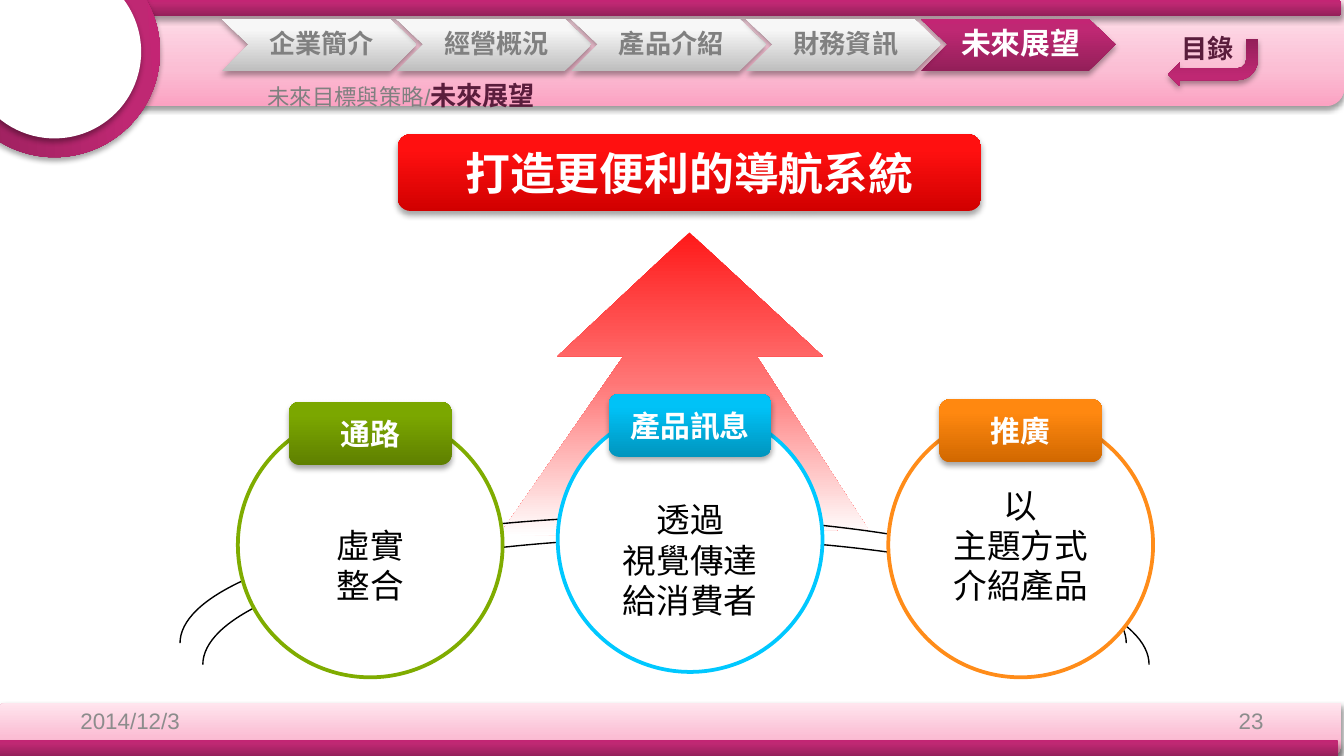
"""Build the future outlook slide of a company deck."""
from dataclasses import dataclass

from lxml import etree
from pptx import Presentation, oxml, util as u
from pptx.dml.color import RGBColor
from pptx.enum import shapes, text
from pptx.oxml.ns import nsdecls, qn

KIND = shapes.MSO_SHAPE
ALIGN = text.PP_ALIGN
ANCHOR = text.MSO_ANCHOR


@dataclass(frozen=True)
class Theme:
    """Colours, gradients and type sizes of the deck."""
    font: str = "Arial"
    white: str = "FFFFFF"
    black: str = "000000"
    gray: str = "808080"
    pale: str = "8C8C8C"
    plum: str = "5A1D3C"
    band: tuple = ((0, "FBA2C2"), (35, "FBBED4"), (100, "FFE5EE"))
    rose: tuple = ((0, "931F59"), (80, "BF2873"), (100, "C32574"))
    silver: tuple = ((0, "BEBEBE"), (80, "F7F7F7"), (100, "F8F8F8"))
    red: tuple = ((0, "D10000"), (80, "FF1010"), (100, "FF1212"))
    fade: tuple = ((0, "FF1919"), (49, "FF7575"), (100, "FFFFFF"))
    green: tuple = ((0, "5F8000"), (80, "7BA700"), (100, "7CA700"))
    blue: tuple = ((0, "0095BE"), (80, "00C2F7"), (100, "00C3F8"))
    orange: tuple = ((0, "D16800"), (80, "FF8810"), (100, "FF8812"))
    small: int = 12
    menu: int = 14
    label: int = 16
    body: int = 18
    head: int = 24


T = Theme()


def inches(*sizes):
    """Turn numbers into lengths."""
    return [u.Inches(size) for size in sizes]


def paint(shape, fill, angle=270):
    """Fill a shape with a plain colour or a gradient, without a line."""
    shape.line.fill.background()
    if isinstance(fill, str):
        shape.fill.solid()
        shape.fill.fore_color.rgb = RGBColor.from_string(fill)
        return
    shape.fill.gradient()
    grad = shape.element.spPr.find(qn("a:gradFill"))
    stops = "".join(
        f'<a:gs pos="{pos * 1000}"><a:srgbClr val="{tone}"/></a:gs>'
        for pos, tone in fill)
    grad.getparent().replace(grad, oxml.parse_xml(
        f'<a:gradFill {nsdecls("a")} rotWithShape="1"><a:gsLst>{stops}</a:gsLst>'
        f'<a:lin ang="{angle * 60000}" scaled="0"/></a:gradFill>'))


def shade(shape, alpha=35, dist=1.8):
    """Drop a soft shadow below a shape."""
    shape.shadow.inherit = False
    effects = shape.element.spPr.find(qn("a:effectLst"))
    drop = etree.SubElement(
        effects, qn("a:outerShdw"), blurRad=str(u.Pt(3.1)),
        dist=str(u.Pt(dist)), dir="5400000", rotWithShape="0")
    tone = etree.SubElement(drop, qn("a:srgbClr"), val=T.black)
    etree.SubElement(tone, qn("a:alpha"), val=str(alpha * 1000))


def style(font, size, color, bold=False):
    """Set the look of a font."""
    font.name, font.size, font.bold = T.font, u.Pt(size), bold
    font.color.rgb = RGBColor.from_string(color)


def write(shape, words, size, color, bold=False, align=ALIGN.CENTER,
          anchor=ANCHOR.MIDDLE):
    """Put evenly styled words into a shape."""
    frame = shape.text_frame
    frame.text = words
    frame.word_wrap, frame.vertical_anchor = True, anchor
    for par in frame.paragraphs:
        par.alignment = align
        style(par.font, size, color, bold)
    return frame


def add_box(slide, kind, place, fill):
    """Add a preset shape with a shadow."""
    shape = slide.shapes.add_shape(kind, *inches(*place))
    paint(shape, fill)
    shade(shape)
    return shape


def add_label(slide, place, fill, words, size):
    """Add a rounded box with bold white words."""
    box = add_box(slide, KIND.ROUNDED_RECTANGLE, place, fill)
    write(box, words, size, T.white, bold=True)


def add_path(slide, points, fill, angle=270):
    """Add a closed outline through points given in inches."""
    first, *rest = [inches(*point) for point in points]
    pen = slide.shapes.build_freeform(*first, scale=1.0)
    pen.add_line_segments(rest, close=True)
    shape = pen.convert_to_shape()
    shape.shadow.inherit = False
    paint(shape, fill, angle)
    return shape


def add_note(slide, place, words, size, color, **look):
    """Add a text box."""
    write(slide.shapes.add_textbox(*inches(*place)), words, size, color,
          **look)


def add_step(slide, left, words, active):
    """Add one chevron of the menu."""
    top, mid, base = 0.14, 0.33, 0.53
    points = [(left, top), (left + 1.25, top), (left + 1.45, mid),
              (left + 1.25, base), (left, base), (left + 0.2, mid)]
    step = add_path(slide, points, T.rose if active else T.silver)
    shade(step)
    look = (T.label, T.white) if active else (T.menu, T.gray)
    frame = write(step, words, *look, bold=True)
    frame.margin_left, frame.margin_right = inches(0.26, 0.22)
    frame.margin_top = frame.margin_bottom = u.Inches(0.02)
    frame.paragraphs[0].line_spacing = 0.9


def add_arc(slide, left, top, flip):
    """Add a quarter of the road behind the circles."""
    arc = slide.shapes.add_shape(KIND.ARC, *inches(left, top, 7.24, 1.89))
    arc.shadow.inherit = False
    arc.fill.background()
    arc.line.color.rgb = RGBColor.from_string(T.black)
    arc.line.width = u.Pt(0.75)
    if flip:
        arc.element.spPr.find(qn("a:xfrm")).set("flipH", "1")


def add_topic(slide, left, top, tag, tone, ring, label, words, drop):
    """Add a ringed circle of words below its label."""
    disc = slide.shapes.add_shape(KIND.OVAL, *inches(left, top, 1.97, 1.97))
    disc.shadow.inherit = False
    paint(disc, T.white)
    disc.line.color.rgb = RGBColor.from_string(ring)
    disc.line.width = u.Pt(2)
    write(disc, words, T.body, T.black).margin_top = u.Inches(0.05 + drop)
    add_label(slide, (left + 0.38, tag, 1.21, 0.47), tone, label, T.label)


def add_frame(slide):
    """Add the bands, bars and round corner of the page."""
    for place in ((-0.02, 5.23, 10, 0.39), (0, 0, 10, 0.79)):
        band = add_box(slide, KIND.ROUND_2_DIAG_RECTANGLE, place, T.band)
        shade(band, 38, 1.6)
    for place in ((0, 0, 9.98, 0.12), (-0.02, 5.51, 9.98, 0.12)):
        add_box(slide, KIND.ROUNDED_RECTANGLE, place, T.rose)
    for inset, fill in ((0, T.rose), (0.14, T.white)):
        size = 1.57 - 2 * inset
        place = (inset - 0.38, inset - 0.4, size, size)
        add_box(slide, KIND.OVAL, place, fill).rotation = 86


def add_menu(slide):
    """Add the chevrons and the way back to the contents."""
    names = ("企業簡介", "經營概況", "產品介紹", "財務資訊", "未來展望")
    last = len(names) - 1
    for spot in (last, *range(last)):
        add_step(slide, 1.65 + 1.3 * spot, names[spot], spot == last)
    back = add_box(slide, KIND.BENT_ARROW, (8.69, 0.29, 0.67, 0.35), T.rose)
    frame = back.element.spPr.find(qn("a:xfrm"))
    frame.set("flipH", "1")
    frame.set("flipV", "1")
    add_note(slide, (8.69, 0.19, 0.93, 0.34), "目錄", T.menu, T.plum,
             bold=True, align=ALIGN.LEFT, anchor=ANCHOR.TOP)


def add_title(slide):
    """Set the title as a trail to the current section, on top of the band."""
    title = slide.shapes.title
    title.left, title.top, title.width, title.height = inches(
        1.89, 0.54, 7.6, 0.34)
    slide.shapes.element.append(title.element)
    frame = title.text_frame
    frame.word_wrap, frame.vertical_anchor = True, ANCHOR.TOP
    frame.auto_size = text.MSO_AUTO_SIZE.NONE
    par = frame.paragraphs[0]
    par.alignment = ALIGN.LEFT
    for words, *look in (("未來目標與策略/", T.small, T.gray),
                         ("未來展望", T.menu, T.plum, True)):
        run = par.add_run()
        run.text = words
        style(run.font, *look)


def main():
    """Build and save the slide."""
    deck = Presentation()
    deck.slide_width = u.Inches(10)
    deck.slide_height = deck.slide_width * 9 // 16
    slide = deck.slides.add_slide(deck.slide_layouts[5])
    add_frame(slide)
    add_menu(slide)
    add_path(slide, [(4.15, 2.65), (5.13, 1.73), (6.12, 2.65), (5.63, 2.65),
                     (6.46, 3.94), (3.71, 3.99), (4.64, 2.65)], T.fade, 90)
    for left, top in ((1.14, 3.84), (1.31, 4)):
        add_arc(slide, left, top, False)
        add_arc(slide, left + 0.2, top, True)
    for left, words, align in ((0.5, "2014/12/3", ALIGN.LEFT),
                               (7.17, "23", ALIGN.RIGHT)):
        add_note(slide, (left, 5.21, 2.33, 0.3), words, T.small, T.pale,
                 align=align)
    for topic in (
            (1.77, 3.07, 2.99, T.green, "7FAC00", "通路", "虛實\v整合", 0.3),
            (4.15, 3.03, 2.93, T.blue, "00C8FF", "產品訊息",
             "透過\v視覺傳達\n給消費者", 0.3),
            (6.61, 3.07, 2.97, T.orange, "FF8C19", "推廣",
             "以\v主題方式\v介紹產品", 0)):
        add_topic(slide, *topic)
    add_label(slide, (2.96, 1, 4.34, 0.57), T.red, "打造更便利的導航系統", T.head)
    add_title(slide)
    deck.save("out.pptx")


if __name__ == "__main__":
    main()
